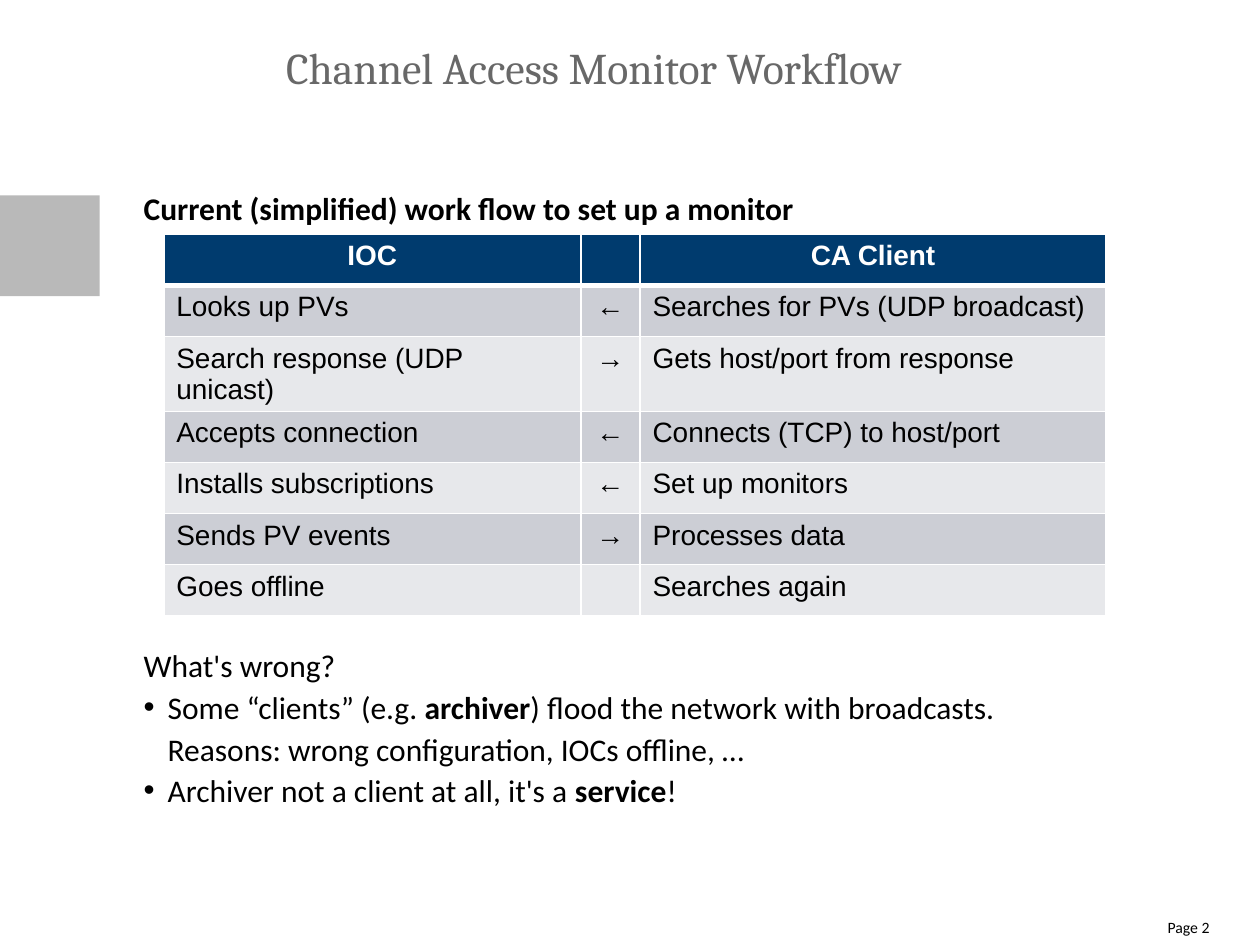
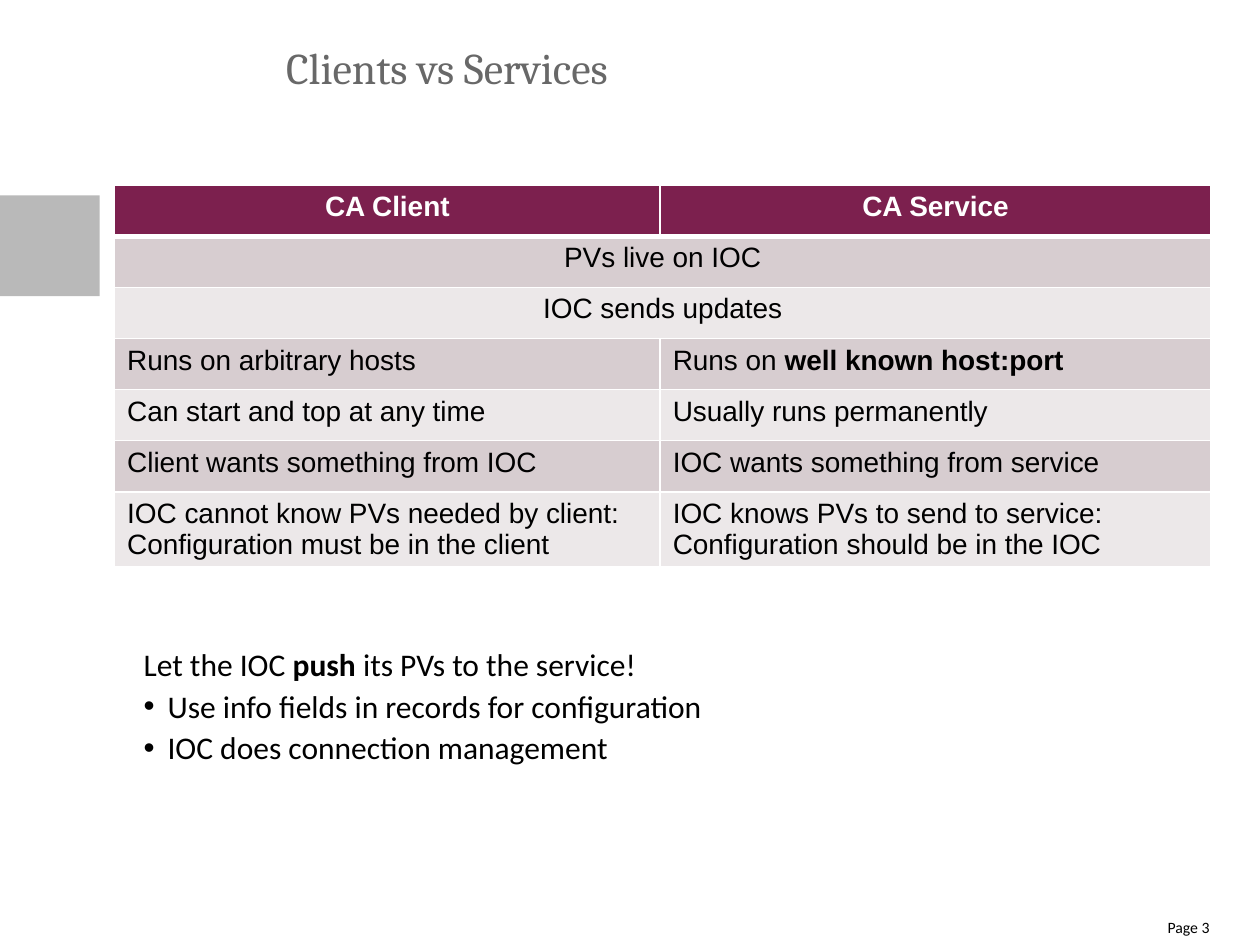
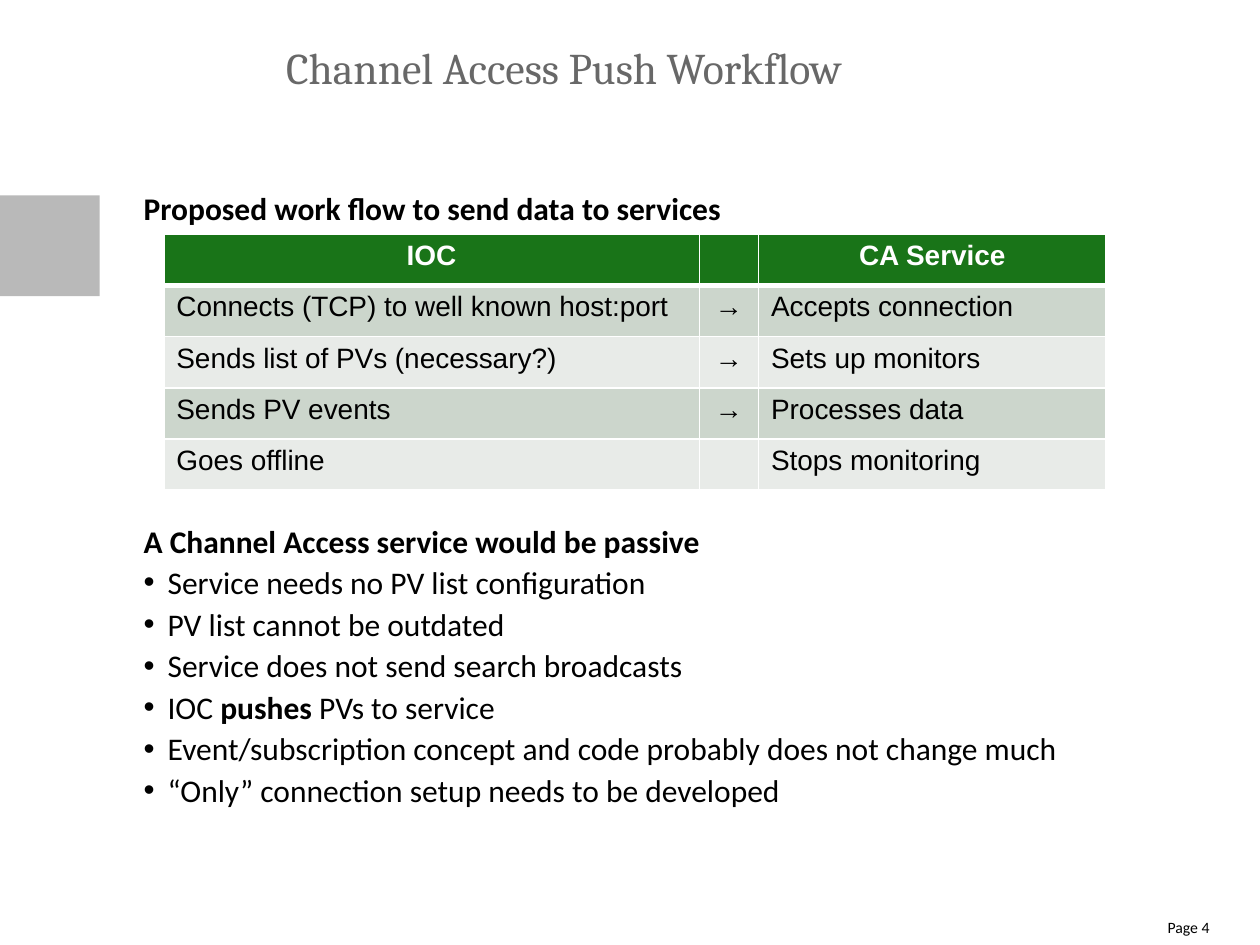
from lxml.etree import SubElement
from pptx import Presentation
from pptx.dml.color import RGBColor
from pptx.enum.shapes import MSO_SHAPE
from pptx.enum.text import MSO_ANCHOR, MSO_AUTO_SIZE, PP_ALIGN
from pptx.oxml.ns import qn
from pptx.util import Inches, Pt

RECTANGLE = MSO_SHAPE.RECTANGLE
TOP = MSO_ANCHOR.TOP
NO_AUTOFIT = MSO_AUTO_SIZE.NONE
LEFT, CENTER, RIGHT = PP_ALIGN.LEFT, PP_ALIGN.CENTER, PP_ALIGN.RIGHT

COLORS = {
    "title": "686868",
    "text": "000000",
    "white": "FFFFFF",
    "side block": "B9B9B9",
}
# Header, odd row and even row fills of each table
TABLE_THEMES = {
    "blue": ("003B6E", "CCCED5", "E7E8EB"),
    "plum": ("7C204E", "D7CDD0", "ECE8E9"),
    "green": ("197418", "CCD6CC", "E8EBE8"),
}
TITLE_FONT, BODY_FONT, TABLE_FONT = "Cambria", "Calibri", "Arial"
TITLE_SIZE, BODY_SIZE, TABLE_SIZE, PAGE_SIZE = 25, 18, 16, 9

TITLE_BOX = (2.27, 0.32, 7.34, 0.56)
BODY_BOX = (1.14, 1.47, 8.47, 5.12)
BULLET_INDENT = Inches(0.19)
LINE_SPACING = 1.1
LINE_PITCH = 23.76
ARROW_WIDTH = 0.47


def rgb(color):
    return RGBColor.from_string(color)


def place(shape, box):
    shape.left, shape.top, shape.width, shape.height = map(Inches, box)


def clear_frame(text_frame):
    """Top-anchor the text and take away insets and autofit."""
    text_frame.margin_left = text_frame.margin_right = 0
    text_frame.margin_top = text_frame.margin_bottom = 0
    text_frame.vertical_anchor = TOP
    text_frame.word_wrap = True
    text_frame.auto_size = NO_AUTOFIT


def format_run(run, font, size, color, bold=False):
    run.font.name = font
    run.font.size = Pt(size)
    run.font.bold = bold
    run.font.color.rgb = rgb(color)


def write_rich(paragraph, text, font, size, color, bold=False):
    """Write text with **bold** parts and line breaks at newlines."""
    for part_index, part in enumerate(text.split("**")):
        for line_index, line in enumerate(part.split("\n")):
            if line_index:
                paragraph.add_line_break()
                SubElement(paragraph._p[-1], qn("a:rPr"), sz=str(size * 100))
            if line:
                run = paragraph.add_run()
                run.text = line
                format_run(run, font, size, color, bold or part_index % 2 == 1)


def set_bullet(paragraph, bulleted):
    properties = paragraph._p.get_or_add_pPr()
    indent = BULLET_INDENT if bulleted else 0
    properties.set("marL", str(indent))
    properties.set("indent", str(-indent))
    if bulleted:
        SubElement(properties, qn("a:buChar"), char="•")
    else:
        SubElement(properties, qn("a:buNone"))


def prepare_layout(layout):
    for placeholder, box in zip(layout.placeholders, (TITLE_BOX, BODY_BOX)):
        place(placeholder, box)
        clear_frame(placeholder.text_frame)


def add_side_block(slide):
    """Add the grey block at the left edge to the layout the slide uses."""
    block = slide.shapes.add_shape(
        RECTANGLE, 0, Inches(1.55), Inches(0.79), Inches(0.8))
    block.shadow.inherit = False
    block.fill.solid()
    block.fill.fore_color.rgb = rgb(COLORS["side block"])
    block.line.fill.background()
    slide.slide_layout.shapes.element.insert(2, block.element)


def add_page_number(slide, number):
    box = slide.shapes.add_textbox(
        Inches(8.97), Inches(7.28), Inches(0.63), Inches(0.22))
    clear_frame(box.text_frame)
    paragraph = box.text_frame.paragraphs[0]
    paragraph.text = f"Page {number}"
    paragraph.alignment = RIGHT
    format_run(paragraph.runs[0], BODY_FONT, PAGE_SIZE, COLORS["text"])


def add_slide(presentation, layout, title, number):
    slide = presentation.slides.add_slide(layout)
    paragraph = slide.shapes.title.text_frame.paragraphs[0]
    paragraph.text = title
    paragraph.alignment = LEFT
    format_run(paragraph.runs[0], TITLE_FONT, TITLE_SIZE, COLORS["title"])
    add_page_number(slide, number)
    return slide


def fill_body(slide, lead, bullets, heading=None, table_lines=0):
    """Write an optional heading, room for a table, a lead line and bullets."""
    lines = [(heading, False)] if heading else []
    lead_index = len(lines)
    lines += [(lead, False)] + [(bullet, True) for bullet in bullets]
    text_frame = slide.placeholders[1].text_frame
    for index, (text, bulleted) in enumerate(lines):
        paragraph = text_frame.add_paragraph() if index else text_frame.paragraphs[0]
        set_bullet(paragraph, bulleted)
        paragraph.line_spacing = LINE_SPACING
        gap = table_lines * LINE_PITCH if index == lead_index else 0
        paragraph.space_before = Pt(gap)
        write_rich(paragraph, text, BODY_FONT, BODY_SIZE, COLORS["text"])


def set_borders(cell, row_index):
    properties = cell._tc.get_or_add_tcPr()
    widths = {
        "L": 1,
        "R": 1,
        "T": 3 if row_index == 1 else 1,
        "B": 3 if row_index == 0 else 1,
    }
    for side, width in widths.items():
        line = SubElement(properties, qn(f"a:ln{side}"), w=str(Pt(width)))
        fill = SubElement(line, qn("a:solidFill"))
        SubElement(fill, qn("a:srgbClr"), val=COLORS["white"])


def fill_cell(cell, text, color, bold, centered):
    text_frame = cell.text_frame
    for index, line in enumerate(text.split("\n")):
        paragraph = text_frame.add_paragraph() if index else text_frame.paragraphs[0]
        paragraph.alignment = CENTER if centered else LEFT
        write_rich(paragraph, line, TABLE_FONT, TABLE_SIZE, color, bold)


def add_flow_table(slide, box, column_widths, theme, rows):
    """Add a banded table; a row with a single text spans all columns."""
    header_fill, *band_fills = TABLE_THEMES[theme]
    column_count = len(column_widths)
    table = slide.shapes.add_table(
        len(rows), column_count, *map(Inches, box)).table
    for column, width in zip(table.columns, column_widths):
        column.width = Inches(width)
    for row_index, texts in enumerate(rows):
        is_header = row_index == 0
        spans_row = len(texts) == 1
        row_fill = header_fill if is_header else band_fills[(row_index - 1) % 2]
        color = COLORS["white"] if is_header else COLORS["text"]
        for column_index in range(column_count):
            cell = table.cell(row_index, column_index)
            set_borders(cell, row_index)
            cell.fill.solid()
            cell.fill.fore_color.rgb = rgb(row_fill)
            if column_index < len(texts):
                is_arrow = column_widths[column_index] == ARROW_WIDTH
                fill_cell(cell, texts[column_index], color, is_header,
                          is_header or spans_row or is_arrow)
        if spans_row:
            table.cell(row_index, 0).merge(
                table.cell(row_index, column_count - 1))


def build_monitor_slide(presentation, layout):
    slide = add_slide(presentation, layout, "Channel Access Monitor Workflow", 2)
    add_side_block(slide)
    fill_body(
        slide,
        lead="What's wrong?",
        bullets=[
            "Some “clients” (e.g. **archiver**) flood the network with broadcasts.\n"
            "Reasons: wrong configuration, IOCs offline, …",
            "Archiver not a client at all, it's a **service**!",
        ],
        heading="**Current (simplified) work flow to set up a monitor**",
        table_lines=10,
    )
    add_flow_table(slide, (1.3, 1.86, 7.48, 2.84), (3.31, ARROW_WIDTH, 3.7), "blue", [
        ("IOC", "", "CA Client"),
        ("Looks up PVs", "←", "Searches for PVs (UDP broadcast)"),
        ("Search response (UDP unicast)", "→", "Gets host/port from response"),
        ("Accepts connection", "←", "Connects (TCP) to host/port"),
        ("Installs subscriptions", "←", "Set up monitors"),
        ("Sends PV events", "**→**", "Processes data"),
        ("Goes offline", "", "Searches again"),
    ])


def build_comparison_slide(presentation, layout):
    slide = add_slide(presentation, layout, "Clients vs Services", 3)
    place(slide.placeholders[1], (1.14, 5.09, 8.47, 1.57))
    fill_body(
        slide,
        lead="Let the IOC **push** its PVs to the service!",
        bullets=[
            "Use info fields in records for configuration",
            "IOC does connection management",
        ],
    )
    add_flow_table(slide, (0.91, 1.47, 8.7, 2.84), (4.33, 4.37), "plum", [
        ("CA Client", "CA Service"),
        ("PVs live on IOC",),
        ("IOC sends updates",),
        ("Runs on arbitrary hosts", "Runs on **well known host:port**"),
        ("Can start and top at any time", "Usually runs permanently"),
        ("Client wants something from IOC", "IOC wants something from service"),
        ("IOC cannot know PVs needed by client:\nConfiguration must be in the client",
         "IOC knows PVs to send to service:\nConfiguration should be in the IOC"),
    ])


def build_push_slide(presentation, layout):
    slide = add_slide(presentation, layout, "Channel Access Push Workflow", 4)
    fill_body(
        slide,
        lead="**A Channel Access service would be passive**",
        bullets=[
            "Service needs no PV list configuration",
            "PV list cannot be outdated",
            "Service does not send search broadcasts",
            "IOC **pushes** PVs to service",
            "Event/subscription concept and code probably does not change much",
            "“Only” connection setup needs to be developed",
        ],
        heading="**Proposed work flow to send data to services**",
        table_lines=7,
    )
    add_flow_table(slide, (1.3, 1.86, 7.48, 2.03), (4.25, ARROW_WIDTH, 2.76), "green", [
        ("IOC", "", "CA Service"),
        ("Connects (TCP) to well known host:port", "→", "Accepts connection"),
        ("Sends list of PVs (necessary?)", "→", "Sets up monitors"),
        ("Sends PV events", "**→**", "Processes data"),
        ("Goes offline", "", "Stops monitoring"),
    ])


def main():
    presentation = Presentation()
    presentation.slide_width = Inches(10)
    presentation.slide_height = Inches(7.5)
    layout = presentation.slide_layouts[1]
    prepare_layout(layout)
    build_monitor_slide(presentation, layout)
    build_comparison_slide(presentation, layout)
    build_push_slide(presentation, layout)
    presentation.save("out.pptx")


if __name__ == "__main__":
    main()
